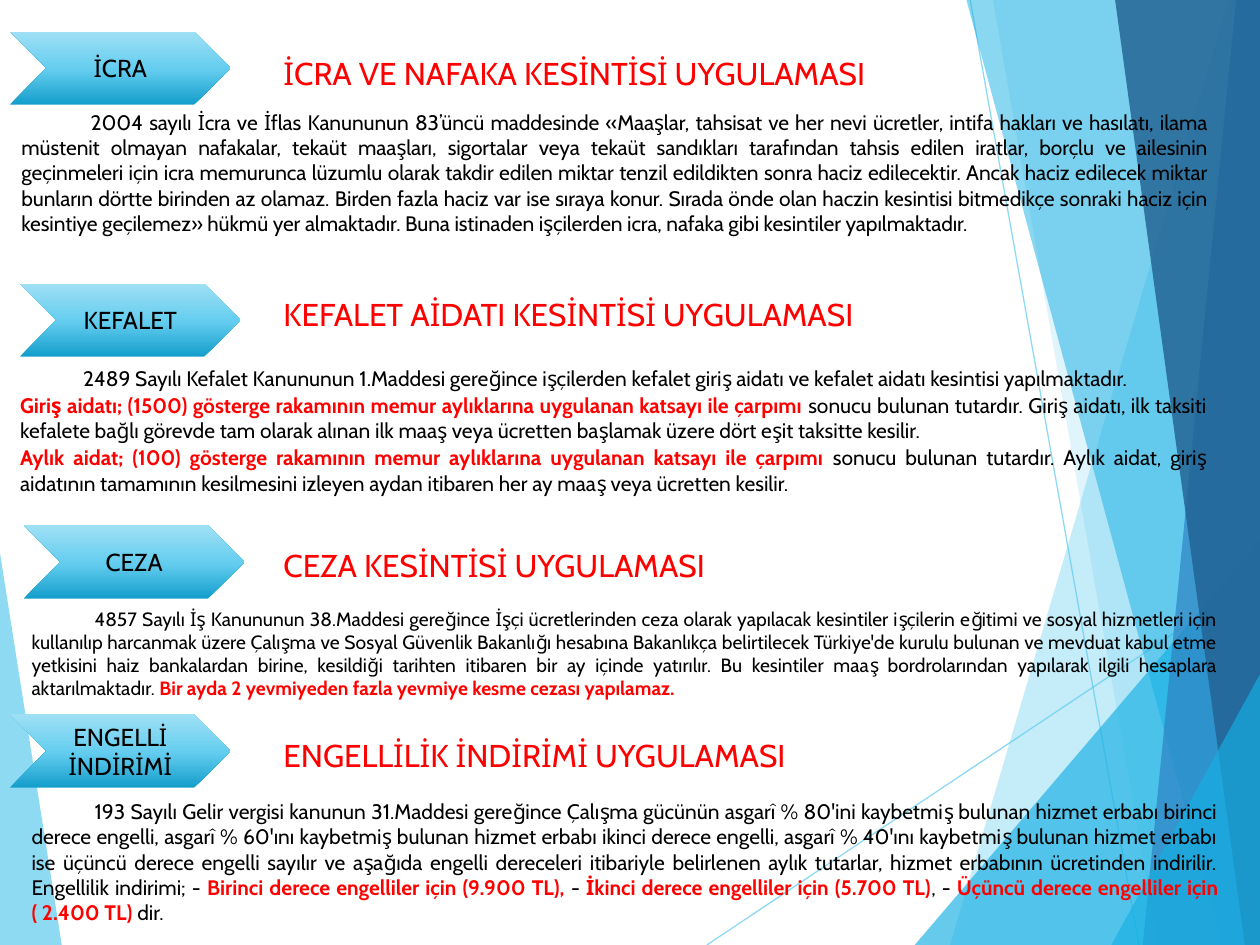
from copy import deepcopy

from lxml.etree import SubElement
from pptx import Presentation
from pptx.dml.color import RGBColor
from pptx.enum.shapes import MSO_CONNECTOR, MSO_SHAPE
from pptx.enum.text import MSO_ANCHOR, PP_ALIGN
from pptx.oxml.ns import qn
from pptx.util import Inches, Pt

FONT = "Cabin"
BLACK, RED = "000000", "FF0000"
SKY, AZURE, STEEL, NAVY = "5FCBEF", "17B0E4", "2E83C3", "226292"

# Background facets: corner points, colour, opacity in percent
LEFT_FACET = ([(0, 4.39), (0.49, 7.5), (0, 7.5)], SKY, 70)
RIGHT_FACETS = [
    ([(9.75, 0), (7.54, 7.5), (10, 7.5), (10, 0)], SKY, 36),
    ([(7.88, 0), (9.19, 7.5), (10, 7.5), (10, 0)], SKY, 20),
    ([(7.26, 7.5), (10, 4.29), (10, 7.5)], AZURE, 66),
    ([(7.67, 0), (9.7, 7.5), (10, 7.5), (10, 0)], AZURE, 50),
    ([(9.81, 0), (9.07, 7.5), (10, 7.5), (10, 0)], STEEL, 70),
    ([(8.85, 0), (9.88, 7.5), (10, 7.5), (10, 0)], NAVY, 82),
    ([(8.82, 7.5), (10, 5.35), (10, 7.5)], AZURE, 66),
]
RAYS = [((5.61, 7.5), (10, 4.57)), ((7.7, 0), (9.04, 7.5))]

# Paragraphs are lists of (text, is highlighted)
SECTIONS = [
    {
        "label": "İCRA", "label_at": (0.08, 0.25),
        "heading": "İCRA VE NAFAKA KESİNTİSİ UYGULAMASI", "heading_top": 0.42,
        "body_box": (0.17, 0.86, 9.42, 1.22), "size": 12, "indent": 0.55, "spacing": -5,
        "paragraphs": [[(
            "2004 sayılı İcra ve İflas Kanununun 83’üncü maddesinde «Maaşlar, tahsisat ve her nevi "
            "ücretler, intifa hakları ve hasılatı, ilama müstenit olmayan nafakalar, tekaüt maaşları, "
            "sigortalar veya tekaüt sandıkları tarafından tahsis edilen iratlar, borçlu ve ailesinin "
            "geçinmeleri için icra memurunca lüzumlu olarak takdir edilen miktar tenzil edildikten "
            "sonra haciz edilecektir. Ancak haciz edilecek miktar bunların dörtte birinden az olamaz. "
            "Birden fazla haciz var ise sıraya konur. Sırada önde olan haczin kesintisi bitmedikçe "
            "sonraki haciz için kesintiye geçilemez» hükmü yer almaktadır. Buna istinaden işçilerden "
            "icra, nafaka gibi kesintiler yapılmaktadır.", False)]],
    },
    {
        "label": "KEFALET", "label_at": (0.16, 2.25),
        "heading": "KEFALET AİDATI KESİNTİSİ UYGULAMASI", "heading_top": 2.33,
        "body_box": (0.16, 2.89, 9.42, 1.25), "size": 12, "indent": 0.5, "spacing": 0,
        "paragraphs": [
            [("2489 Sayılı Kefalet Kanununun 1.Maddesi gereğince işçilerden kefalet giriş aidatı ve "
              "kefalet aidatı kesintisi yapılmaktadır.", False)],
            [("Giriş aidatı; (1500) gösterge rakamının memur aylıklarına uygulanan katsayı ile "
              "çarpımı", True),
             (" sonucu bulunan tutardır. Giriş aidatı, ilk taksiti kefalete bağlı görevde tam olarak "
              "alınan ilk maaş veya ücretten başlamak üzere dört eşit taksitte kesilir.", False)],
            [("Aylık aidat; (100) gösterge rakamının memur aylıklarına uygulanan katsayı ile "
              "çarpımı ", True),
             ("sonucu bulunan tutardır. Aylık aidat, giriş aidatının tamamının kesilmesini izleyen "
              "aydan itibaren her ay maaş veya ücretten kesilir.", False)],
        ],
    },
    {
        "label": "CEZA", "label_at": (0.19, 4.17),
        "heading": "CEZA KESİNTİSİ UYGULAMASI", "heading_top": 4.32,
        "body_box": (0.25, 4.81, 9.42, 0.77), "size": 11, "indent": 0.5, "spacing": 0,
        "paragraphs": [[
            ("4857 Sayılı İş Kanununun 38.Maddesi gereğince İşçi ücretlerinden ceza olarak yapılacak "
             "kesintiler işçilerin eğitimi ve sosyal hizmetleri için kullanılıp harcanmak üzere "
             "Çalışma ve Sosyal Güvenlik Bakanlığı hesabına Bakanlıkça belirtilecek Türkiye'de kurulu "
             "bulunan ve mevduat kabul etme yetkisini haiz bankalardan birine, kesildiği tarihten "
             "itibaren bir ay içinde yatırılır. Bu kesintiler maaş bordrolarından yapılarak ilgili "
             "hesaplara aktarılmaktadır. ", False),
            ("Bir ayda 2 yevmiyeden fazla yevmiye kesme cezası yapılamaz.", True)]],
    },
    {
        "label": "ENGELLİ İNDİRİMİ", "label_at": (0.08, 5.67),
        "heading": "ENGELLİLİK İNDİRİMİ UYGULAMASI", "heading_top": 5.83,
        "body_box": (0.25, 6.33, 9.42, 1.02), "size": 12, "indent": 0.5, "spacing": 0,
        "paragraphs": [[
            ("193 Sayılı Gelir vergisi kanunun 31.Maddesi gereğince Çalışma gücünün asgarî % 80'ini "
             "kaybetmiş bulunan hizmet erbabı birinci derece engelli, asgarî % 60'ını kaybetmiş "
             "bulunan hizmet erbabı ikinci derece engelli, asgarî % 40'ını kaybetmiş bulunan hizmet "
             "erbabı ise üçüncü derece engelli sayılır ve aşağıda engelli dereceleri itibariyle "
             "belirlenen aylık tutarlar, hizmet erbabının ücretinden indirilir. Engellilik "
             "indirimi; - ", False),
            ("Birinci derece engelliler için (9.900 TL),", True), (" - ", False),
            ("İkinci derece engelliler için (5.700 TL)", True), (", - ", False),
            ("Üçüncü derece engelliler için ( 2.400 TL) ", True), ("dir.", False)]],
    },
]


def rgb(color):
    return RGBColor.from_string(color)


def set_values(target, values):
    for name, value in values.items():
        setattr(target, name, value)


def set_opacity(fill_parent, percent):
    """Make the solid colour under the given XML element partly transparent."""
    color = next(fill_parent.iter(qn("a:srgbClr")))
    SubElement(color, qn("a:alpha"), val=str(percent * 1000))


def add_run(paragraph, text, size, color=BLACK, bold=False):
    run = paragraph.add_run()
    run.text = text
    set_values(run.font, {"name": FONT, "size": Pt(size), "bold": bold})
    run.font.color.rgb = rgb(color)
    return run


def add_facet(slide, points, color, opacity):
    corners = [(Inches(x), Inches(y)) for x, y in points]
    builder = slide.shapes.build_freeform(*corners[0])
    builder.add_line_segments(corners[1:], close=True)
    shape = builder.convert_to_shape()
    shape.shadow.inherit = False
    shape.fill.solid()
    shape.fill.fore_color.rgb = rgb(color)
    shape.line.fill.background()
    set_opacity(shape._element.spPr, opacity)


def add_ray(slide, start, end):
    ends = [Inches(value) for value in (*start, *end)]
    connector = slide.shapes.add_connector(MSO_CONNECTOR.STRAIGHT, *ends)
    connector.line.color.rgb = rgb(SKY)
    connector.line.width = Pt(0.75)
    properties = connector._element.spPr
    set_opacity(properties, 70)
    SubElement(properties, qn("a:effectLst"))


def add_background(slide):
    add_facet(slide, *LEFT_FACET)
    for start, end in RAYS:
        add_ray(slide, start, end)
    for facet in RIGHT_FACETS:
        add_facet(slide, *facet)


def fill_with_gradient(shape):
    """Blue gradient with three stops, dark at the bottom."""
    shape.fill.gradient()
    shape.fill.gradient_angle = 90
    first = shape._element.spPr.find(".//" + qn("a:gs"))
    first.addnext(deepcopy(first))
    stops = [(0, "149ECB"), (0.48, "64CDEF"), (1, "9FE0F5")]
    for stop, (position, color) in zip(shape.fill.gradient_stops, stops):
        stop.position = position
        stop.color.rgb = rgb(color)


def add_label(slide, text, left, top):
    shape = slide.shapes.add_shape(
        MSO_SHAPE.CHEVRON, Inches(left), Inches(top), Inches(1.75), Inches(0.58))
    shape.shadow.inherit = False
    shape.line.fill.background()
    fill_with_gradient(shape)
    shape.text_frame.vertical_anchor = MSO_ANCHOR.MIDDLE
    paragraph = shape.text_frame.paragraphs[0]
    paragraph.alignment = PP_ALIGN.CENTER
    add_run(paragraph, text, 14)


def add_text(slide, box, paragraphs, size, space_before, color=BLACK, indent=0, spacing=0):
    frame = slide.shapes.add_textbox(*[Inches(value) for value in box]).text_frame
    set_values(frame, {"word_wrap": True, "margin_left": 0, "margin_right": 0,
                       "margin_top": Inches(0.01), "margin_bottom": 0})
    for index, parts in enumerate(paragraphs):
        paragraph = frame.add_paragraph() if index else frame.paragraphs[0]
        set_values(paragraph, {"alignment": PP_ALIGN.JUSTIFY, "space_before": Pt(space_before)})
        if indent and index == 0:
            paragraph._p.get_or_add_pPr().set("indent", str(Inches(indent)))
        for text, highlighted in parts:
            run = add_run(paragraph, text, size, RED if highlighted else color, highlighted)
            if spacing:
                run.font._element.set("spc", str(spacing))


def add_section(slide, section):
    add_label(slide, section["label"], *section["label_at"])
    add_text(slide, (2.25, section["heading_top"], 4.83, 0.31),
             [[(section["heading"], False)]], 18, 0.5, RED)
    add_text(slide, section["body_box"], section["paragraphs"], section["size"], 1.1,
             indent=section["indent"], spacing=section["spacing"])


def main():
    presentation = Presentation()
    set_values(presentation, {"slide_width": Inches(10), "slide_height": Inches(7.5)})
    slide = presentation.slides.add_slide(presentation.slide_layouts[6])
    add_background(slide)
    for section in SECTIONS:
        add_section(slide, section)
    presentation.save("out.pptx")


if __name__ == "__main__":
    main()
